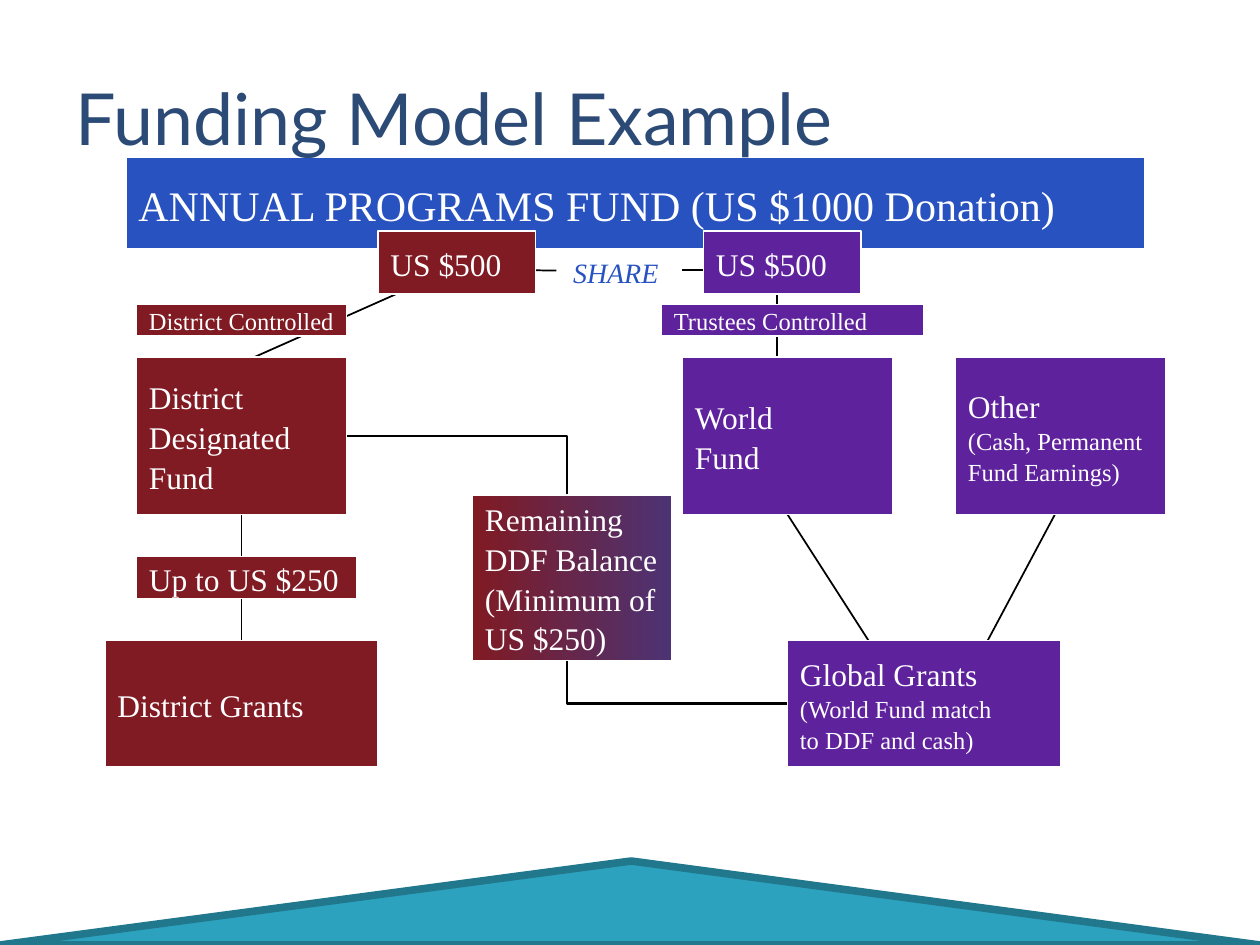
from pptx import Presentation
from pptx.dml.color import RGBColor as RGB
from pptx.enum.shapes import MSO_CONNECTOR as CONN, MSO_SHAPE as SHAPE
from pptx.enum.text import MSO_ANCHOR as ANCHOR, MSO_AUTO_SIZE as AUTO, PP_ALIGN as ALIGN
from pptx.oxml.ns import qn
from pptx.util import Pt
from lxml import etree

C = {k: RGB.from_string(v) for k, v in {
    "white": "FFFFFF", "black": "000000", "blue": "2752C0", "red": "801A23",
    "purple": "5F229D", "plum": "4C3373", "title": "2B4A76",
    "teal": "2DA2BF", "dark teal": "21788D"}.items()}


def add_text(sp, runs, color="white", italic=False):
    """Write (text, size) runs into one left-aligned paragraph."""
    tf = sp.text_frame
    tf.word_wrap = True
    tf.vertical_anchor = ANCHOR.MIDDLE
    p = tf.paragraphs[0]
    p.alignment = ALIGN.LEFT
    p.line_spacing = 1.05
    for text, size in runs:
        for i, line in enumerate(text.split("\n")):
            if i:
                p.add_line_break()
            r = p.add_run()
            r.text = line
            r.font.name, r.font.size = "Times New Roman", Pt(size)
            r.font.italic = italic
            r.font.color.rgb = C[color]


def add_box(kind, x, y, w, h, fill, line="white", width=1):
    sp = s.shapes.add_shape(kind, Pt(x), Pt(y), Pt(w), Pt(h))
    sp.shadow.inherit = False
    sp.fill.solid()
    sp.fill.fore_color.rgb = C[fill]
    sp.line.color.rgb = C[line]
    sp.line.width = Pt(width)
    return sp


prs = Presentation()
prs.slide_width, prs.slide_height = Pt(720), Pt(540)
s = prs.slides.add_slide(prs.slide_layouts[5])

# Footer triangle
footer = add_box(SHAPE.ISOSCELES_TRIANGLE, 0, 492, 720, 48, "teal", "dark teal", 4.33)
footer.adjustments[0] = 0.501

# Banner and SHARE label
banner = add_box(SHAPE.RECTANGLE, 72, 90, 582, 52.5, "blue")
add_text(banner, [("ANNUAL PROGRAMS FUND (US $1000 Donation)", 24)])
share = s.shapes.add_textbox(Pt(320.4), Pt(141.8), Pt(70), Pt(26.6))
add_text(share, [("SHARE", 16)], "blue", italic=True)

# Connectors, kept behind the boxes
connectors = {}
for name, kind, x1, y1, x2, y2, width in [
        ("district share", CONN.STRAIGHT, 284.4, 154.3, 318, 154.6, 1),
        ("trustees share", CONN.STRAIGHT, 390, 154.3, 435, 154.3, 1),
        ("to district fund", CONN.STRAIGHT, 240, 162, 132, 210, 1),
        ("to district grants", CONN.STRAIGHT, 138, 288, 138, 384, 1),
        ("to world fund", CONN.STRAIGHT, 444, 168, 444, 228, 1),
        ("balance", CONN.ELBOW, 198, 249, 450, 402, 1.25),
        ("world match", CONN.STRAIGHT, 450, 294, 504, 378, 1),
        ("other match", CONN.STRAIGHT, 606, 288, 558, 378, 1)]:
    cx = s.shapes.add_connector(kind, Pt(x1), Pt(y1), Pt(x2), Pt(y2))
    cx.line.color.rgb = C["black"]
    cx.line.width = Pt(width)
    etree.SubElement(cx._element.spPr, qn("a:effectLst"))
    connectors[name] = cx

# Boxes
boxes = {}
for name, x, y, w, h, fill, runs in [
        ("district half", 216, 132, 90, 36, "red", [("US $500", 18)]),
        ("trustees half", 402, 132, 90, 36, "purple", [("US $500", 18)]),
        ("district fund", 78, 204, 120, 90, "red", [("District Designated Fund", 18)]),
        ("world fund", 390, 204, 120, 90, "purple", [("World\nFund", 18)]),
        ("other", 546, 204, 120, 90, "purple",
         [("Other\n", 18), ("(Cash, Permanent Fund Earnings)", 14)]),
        ("district grants", 60, 366, 156, 72, "red", [("District Grants", 18)]),
        ("global grants", 450, 366, 156, 72, "purple",
         [("Global Grants\n", 18), ("(World Fund match\nto DDF and cash)", 14)]),
        ("remaining", 270, 283, 114, 94.5, "red",
         [("Remaining DDF Balance (Minimum of US $250)", 18)]),
        ("up to", 78, 318, 126, 24, "red", [("Up to US $250", 18)]),
        ("district label", 78, 174, 120, 18, "red", [("District Controlled", 14)]),
        ("trustees label", 378, 174, 150, 18, "purple", [("Trustees Controlled", 14)])]:
    boxes[name] = add_box(SHAPE.RECTANGLE, x, y, w, h, fill)
    add_text(boxes[name], runs)

# Red-to-plum gradient on the remaining balance
fill = boxes["remaining"].fill
fill.gradient()
fill.gradient_angle = 0
for stop, position, color in zip(fill.gradient_stops, (0, 1), ("red", "plum")):
    stop.position = position
    stop.color.rgb = C[color]

# Joins at the middle of box sides
connectors["balance"].begin_connect(boxes["district fund"], 3)
connectors["balance"].end_connect(boxes["global grants"], 1)
connectors["world match"].begin_connect(boxes["world fund"], 2)

# Title, in front of the banner
title = s.shapes.title
title.left, title.top, title.width, title.height = Pt(36), Pt(21.6), Pt(648), Pt(90)
tf = title.text_frame
tf.auto_size = AUTO.NONE
tf.vertical_anchor = ANCHOR.MIDDLE
p = tf.paragraphs[0]
p.alignment = ALIGN.LEFT
r = p.add_run()
r.text = "Funding Model Example"
r.font.name, r.font.size = "Lato", Pt(41)
r.font.color.rgb = C["title"]
s.shapes._spTree.append(title._element)

prs.save("out.pptx")
